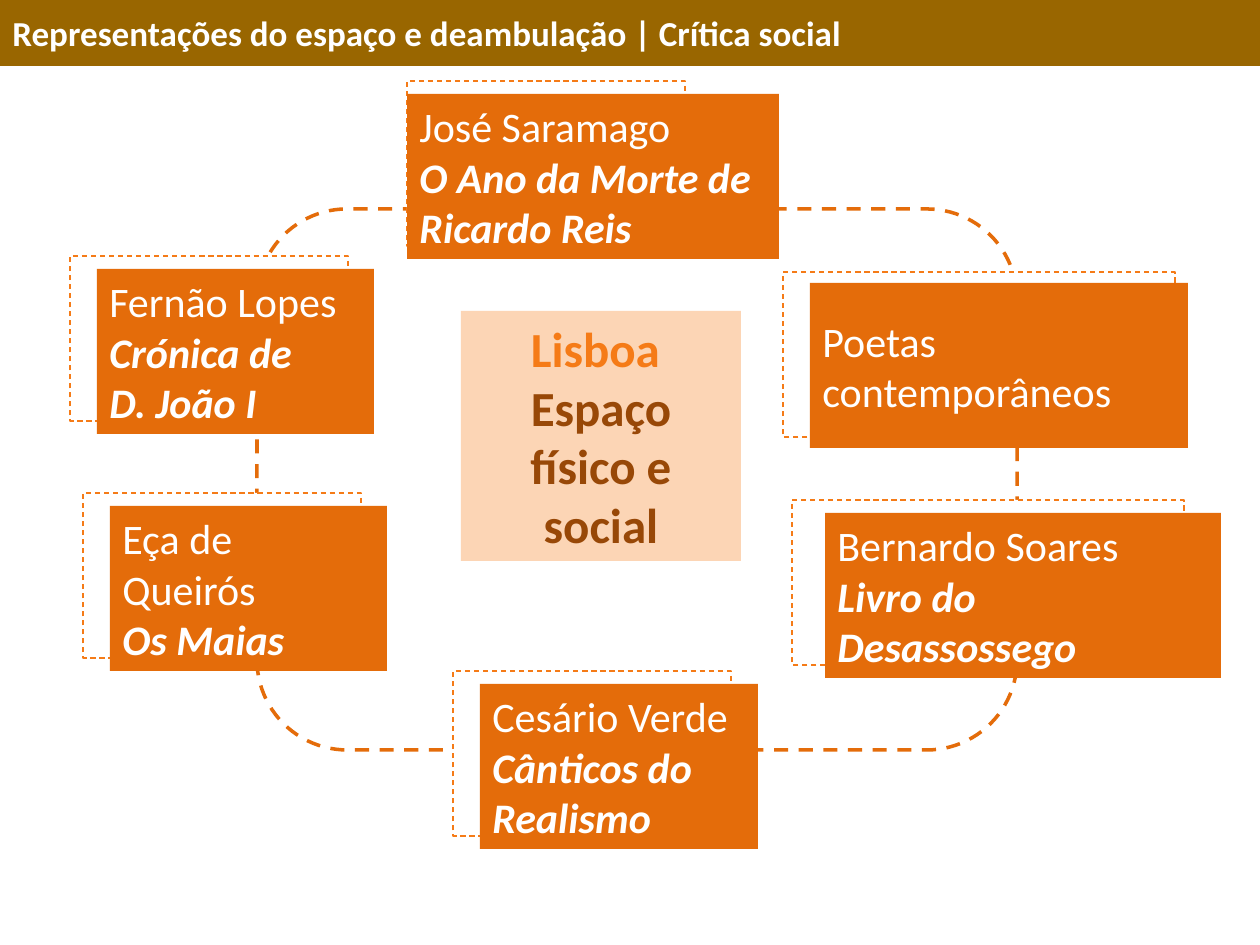
"""Build a slide that links six authors around Lisbon."""
from dataclasses import dataclass
from typing import Any, NamedTuple

from pptx import Presentation
from pptx.dml.color import RGBColor
from pptx.enum.dml import MSO_LINE
from pptx.enum.shapes import MSO_SHAPE
from pptx.enum.text import MSO_ANCHOR, PP_ALIGN
from pptx.util import Emu, Pt

SCALE = 914400 / 126


@dataclass(frozen=True)
class Theme:
    font: str = "Calibri"
    white: str = "FFFFFF"
    brown: str = "996600"
    dark: str = "984807"
    orange: str = "E46C0A"
    bright: str = "F57B17"
    peach: str = "FCD5B5"
    title: int = 20
    body: int = 24
    large: int = 28


THEME = Theme()


class Box(NamedTuple):
    left: int
    top: int
    width: int
    height: int


class Line(NamedTuple):
    text: str
    style: dict[str, Any]


@dataclass(frozen=True)
class Card:
    front: Box
    shift: tuple[int, int]
    back: int
    name: str
    works: tuple[str, ...] = ()


CARDS = (
    Card(Box(825, 513, 396, 165), (33, 13), 392, "Bernardo Soares", ("Livro do Desassossego",)),
    Card(Box(480, 684, 278, 165), (27, 13), 278, "Cesário Verde", ("Cânticos do Realismo",)),
    Card(Box(97, 269, 277, 165), (27, 13), 278, "Fernão Lopes", ("Crónica de", "D. João I")),
    Card(Box(810, 283, 378, 165), (27, 11), 392, "Poetas contemporâneos"),
    Card(Box(110, 506, 277, 165), (27, 13), 278, "Eça de Queirós", ("Os Maias",)),
    Card(Box(407, 94, 372, 165), (0, 13), 278, "José Saramago", ("O Ano da Morte de Ricardo Reis",)),
)


def px(size: int) -> Emu:
    return Emu(round(size * SCALE))


def style(item: Any, values: dict[str, Any]) -> None:
    for key, value in values.items():
        setattr(item, key, value)


def draw(shapes: Any, box: Box, fill: str | None = None, edge: str | None = None,
         weight: float = 0.75, kind: Any = MSO_SHAPE.RECTANGLE) -> Any:
    shape = shapes.add_shape(kind, *map(px, box))
    shape.shadow.inherit = False
    if fill:
        shape.fill.solid()
        shape.fill.fore_color.rgb = RGBColor.from_string(fill)
    else:
        shape.fill.background()
    if edge:
        shape.line.color.rgb = RGBColor.from_string(edge)
        style(shape.line, {"width": Pt(weight), "dash_style": MSO_LINE.DASH})
    else:
        shape.line.fill.background()
    return shape


def write(shape: Any, lines: list[Line], size: int, align: Any = PP_ALIGN.LEFT) -> None:
    frame = shape.text_frame
    style(frame, {"word_wrap": True, "vertical_anchor": MSO_ANCHOR.MIDDLE})
    for index, line in enumerate(lines):
        para = frame.add_paragraph() if index else frame.paragraphs[0]
        para.alignment = align
        run = para.add_run()
        run.text = line.text
        looks = {"color": THEME.white, "name": THEME.font, "size": Pt(size), **line.style}
        run.font.color.rgb = RGBColor.from_string(looks.pop("color"))
        style(run.font, looks)


def deal(shapes: Any, card: Card) -> None:
    group = shapes.add_group_shape().shapes
    front, (right, down) = card.front, card.shift
    back = Box(front.left - right, front.top - down, card.back, front.height)
    draw(group, back, THEME.white, THEME.bright)
    works = [Line(text, {"bold": True, "italic": True}) for text in card.works]
    write(draw(group, front, THEME.orange), [Line(card.name, {}), *works], THEME.body)


def main() -> None:
    deck = Presentation()
    style(deck, {"slide_width": px(1260), "slide_height": px(945)})
    shapes = deck.slides.add_slide(deck.slide_layouts[6]).shapes
    draw(shapes, Box(257, 209, 760, 541), edge=THEME.orange, weight=2,
         kind=MSO_SHAPE.ROUNDED_RECTANGLE)
    title = Line("Representações do espaço e deambulação | Crítica social", {"bold": True})
    write(draw(shapes, Box(0, 0, 1260, 66), THEME.brown), [title], THEME.title)
    theme = [
        Line("Lisboa ", {"bold": True, "color": THEME.bright}),
        Line("Espaço físico e social", {"bold": True, "color": THEME.dark}),
    ]
    hub = draw(shapes, Box(461, 311, 280, 250), THEME.peach)
    write(hub, theme, THEME.large, PP_ALIGN.CENTER)
    for card in CARDS:
        deal(shapes, card)
    deck.save("out.pptx")


if __name__ == "__main__":
    main()
